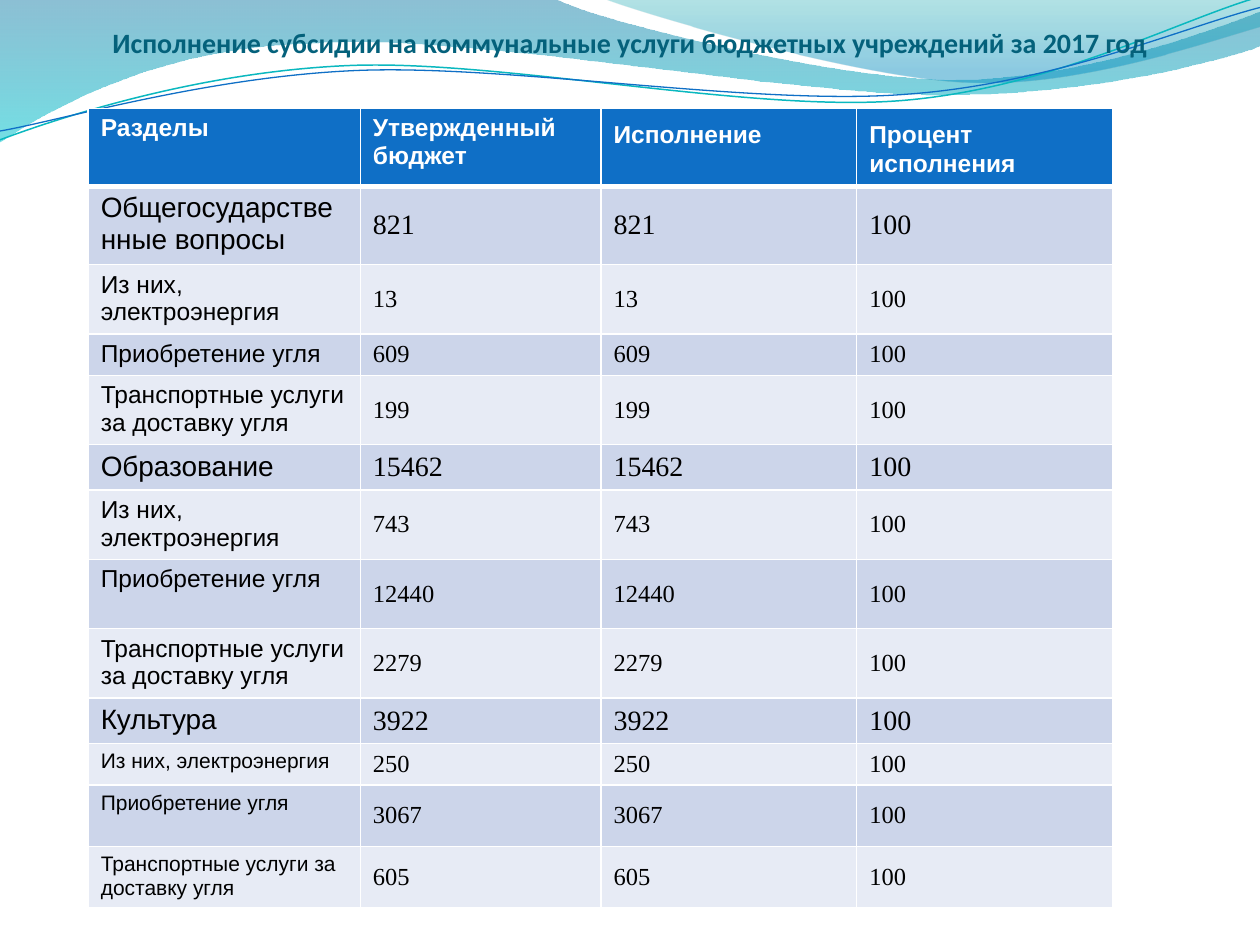
import math
from dataclasses import dataclass
from typing import Any, NamedTuple

from lxml import etree
from pptx import Presentation, util as u
from pptx.dml.color import RGBColor
from pptx.enum import text
from pptx.oxml import ns


@dataclass(frozen=True)
class Theme:
    """Colours, fonts and type sizes of the slide."""
    white: str = "FFFFFF"
    black: str = "000000"
    title: str = "04617B"
    header: str = "0F6FC6"
    bands: tuple = ("CCD5EA", "E7EBF5")
    wave_blue: str = "0074A1"
    wave_cyan: str = "00C6CF"
    crest_teal: str = "00A1A9"
    crest_blue: str = "008BBF"
    line_teal: str = "0AB8BF"
    title_font: str = "Calibri"
    label_font: str = "Arial"
    value_font: str = "Times New Roman"
    section_size: float = 16
    body_size: float = 14
    small_size: float = 12
    gap_size: float = 18


class Stop(NamedTuple):
    """One gradient stop with opacity in percent."""
    position: float
    color: str
    opacity: int


class Wave(NamedTuple):
    """An outline of straight (one point) and Bézier (three point) segments."""
    start: tuple
    segments: tuple
    stops: tuple = ()
    line: str = ""
    width: float = 0
    rotation: float = 0
    center: tuple = (0, 0)


class Row(NamedTuple):
    """One budget line of the table."""
    label: str
    amount: str
    height: float
    label_size: float
    value_size: float


THEME = Theme()
TITLE = "Исполнение субсидии на коммунальные услуги бюджетных учреждений за 2017 год"
POWER, COAL, DELIVERY = "Из них, электроэнергия", "Приобретение угля", "Транспортные услуги за доставку угля"
SECTION = (THEME.section_size, THEME.section_size)
BODY = (THEME.body_size, THEME.body_size)
SMALL = (THEME.small_size, THEME.body_size)
TABLE_BOX = (0.7, 0.86, 8.13, 6.5)
COLUMNS = (2.16, 1.91, 2.03, 2.03)
HEADER_HEIGHT = 0.62
HEADERS = (("Разделы",), ("Утвержденный бюджет",), ("Исполнение", " "), ("Процент", " ", "исполнения"))
ROWS = (
    Row("Общегосударственные вопросы", "821", 0.62, *SECTION),
    Row(POWER, "13", 0.55, *BODY),
    Row(COAL, "609", 0.33, *BODY),
    Row(DELIVERY, "199", 0.55, *BODY),
    Row("Образование", "15462", 0.36, *SECTION),
    Row(POWER, "743", 0.55, *BODY),
    Row(COAL, "12440", 0.55, *BODY),
    Row(DELIVERY, "2279", 0.55, *BODY),
    Row("Культура", "3922", 0.36, *SECTION),
    Row(POWER, "250", 0.33, *SMALL),
    Row(COAL, "3067", 0.49, *SMALL),
    Row(DELIVERY, "605", 0.49, *SMALL),
)
WAVES = (
    Wave((0, 0), (
        ((4.4, -0.01),),
        ((4.76, 0.17), (6.64, 0.63), (7.58, 0.63)),
        ((8.53, 0.63), (9.58, 0.26), (10, 0.09)),
        ((10.01, 0.36),),
        ((9.83, 0.44), (8.7, 0.76), (7.46, 0.75)),
        ((6.22, 0.75), (3.82, 0.28), (2.57, 0.34)),
        ((1.29, 0.36), (0.46, 0.83), (-0.01, 1.13)),
        ((0, 0),),
    ), stops=(Stop(0, THEME.wave_blue, 45), Stop(1, THEME.wave_cyan, 55))),
    Wave((4.79, -0.01), (
        ((5.09, 0.11), (6.82, 0.62), (7.69, 0.65)),
        ((8.56, 0.69), (9.61, 0.32), (10, 0.21)),
        ((10, 0),),
        ((4.79, -0.01),),
    ), stops=(Stop(0, THEME.crest_teal, 30), Stop(0.8, THEME.crest_blue, 45))),
    Wave((0, 1.11), (
        ((0.48, 0.93), (1.58, 0.57), (2.77, 0.52)),
        ((3.95, 0.47), (5.93, 0.89), (7.13, 0.8)),
        ((8.33, 0.71), (9.38, 0.15), (9.98, -0.02)),
    ), line=THEME.line_teal, width=0.85, rotation=357.3, center=(4.99, 0.57)),
    Wave((0, 1.04), (
        ((0.47, 0.96), (1.64, 0.61), (2.83, 0.56)),
        ((4.03, 0.51), (5.97, 0.84), (7.17, 0.75)),
        ((8.36, 0.67), (9.41, 0.21), (10, 0.06)),
    ), line=THEME.header, width=0.75, rotation=357.3, center=(5, 0.59)),
)


def level_point(point: tuple, wave: Wave) -> tuple:
    """Return a point with the rotation of its wave taken out."""
    angle = math.radians(-wave.rotation)
    dx, dy = point[0] - wave.center[0], point[1] - wave.center[1]
    return (u.Inches(wave.center[0] + dx * math.cos(angle) - dy * math.sin(angle)),
            u.Inches(wave.center[1] + dx * math.sin(angle) + dy * math.cos(angle)))


def bend_segments(shape: Any, wave: Wave) -> None:
    """Join the three steps of every Bézier segment into one curve."""
    steps = iter(list(shape.element.iter(ns.qn("a:lnTo"))))
    for segment in wave.segments:
        parts = [next(steps) for _ in segment]
        if len(parts) == 3:
            curve = etree.Element(ns.qn("a:cubicBezTo"))
            parts[0].addprevious(curve)
            for part in parts:
                curve.append(part[0])
                part.getparent().remove(part)


def draw_wave(slide: Any, wave: Wave) -> None:
    """Draw one wave behind the title."""
    builder = slide.shapes.build_freeform(*level_point(wave.start, wave))
    points = [level_point(point, wave) for segment in wave.segments for point in segment]
    builder.add_line_segments(points, close=bool(wave.stops))
    shape = builder.convert_to_shape()
    bend_segments(shape, wave)
    shape.rotation = wave.rotation
    shape.shadow.inherit = False
    if wave.stops:
        shape.line.fill.background()
        shape.fill.gradient()
        shape.fill.gradient_angle = 270
        for gradient_stop, stop in zip(shape.fill.gradient_stops, wave.stops):
            gradient_stop.position = stop.position
            gradient_stop.color.rgb = RGBColor.from_string(stop.color)
        for color, stop in zip(shape.element.spPr.iter(ns.qn("a:srgbClr")), wave.stops):
            etree.SubElement(color, ns.qn("a:alpha"), val=str(stop.opacity * 1000))
    else:
        shape.fill.background()
        shape.line.color.rgb = RGBColor.from_string(wave.line)
        shape.line.width = u.Pt(wave.width)
    slide.shapes.title.element.addprevious(shape.element)


def add_text(paragraph: Any, words: str, size: float, name: str, color: str, bold: bool = False) -> None:
    """Add one formatted run."""
    run = paragraph.add_run()
    run.text = words
    for attribute, value in {"size": u.Pt(size), "name": name, "bold": bold}.items():
        setattr(run.font, attribute, value)
    run.font.color.rgb = RGBColor.from_string(color)


def draw_title(slide: Any) -> None:
    """Place and fill the title."""
    title = slide.shapes.title
    for attribute, value in {"left": 0.5, "top": 0, "width": 9, "height": 0.47}.items():
        setattr(title, attribute, u.Inches(value))
    frame_format = {"margin_left": 0, "margin_right": 0, "margin_top": u.Inches(0.05), "margin_bottom": 0,
                    "word_wrap": True, "auto_size": text.MSO_AUTO_SIZE.NONE,
                    "vertical_anchor": text.MSO_ANCHOR.BOTTOM}
    for attribute, value in frame_format.items():
        setattr(title.text_frame, attribute, value)
    paragraph = title.text_frame.paragraphs[0]
    paragraph.alignment = text.PP_ALIGN.CENTER
    add_text(paragraph, TITLE, THEME.section_size, THEME.title_font, THEME.title, True)


def style_cell(cell: Any, fill: str, bottom: float = 1) -> None:
    """Give a cell white borders and a plain fill."""
    properties = cell._tc.get_or_add_tcPr()
    for side, width in {"L": 1, "R": 1, "T": 1, "B": bottom}.items():
        border = etree.SubElement(properties, ns.qn(f"a:ln{side}"), w=str(u.Pt(width)))
        solid = etree.SubElement(border, ns.qn("a:solidFill"))
        etree.SubElement(solid, ns.qn("a:srgbClr"), val=THEME.white)
    cell.fill.solid()
    cell.fill.fore_color.rgb = RGBColor.from_string(fill)


def draw_table(slide: Any) -> None:
    """Draw the budget table."""
    heights = (HEADER_HEIGHT, *(row.height for row in ROWS))
    frame = slide.shapes.add_table(len(heights), len(COLUMNS), *map(u.Inches, TABLE_BOX))
    table = frame.table
    for column, width in zip(table.columns, COLUMNS):
        column.width = u.Inches(width)
    for table_row, height in zip(table.rows, heights):
        table_row.height = u.Inches(height)
    frame.height = u.Inches(TABLE_BOX[3])
    for cell, pieces in zip(table.rows[0].cells, HEADERS):
        style_cell(cell, THEME.header, bottom=3)
        for piece in pieces:
            size = THEME.body_size if piece.strip() else THEME.gap_size
            add_text(cell.text_frame.paragraphs[0], piece, size, THEME.label_font, THEME.white, True)
    for index, row in enumerate(ROWS):
        for column, words in enumerate((row.label, row.amount, row.amount, "100")):
            cell = table.cell(index + 1, column)
            style_cell(cell, THEME.bands[index % 2])
            size, font = (row.value_size, THEME.value_font) if column else (row.label_size, THEME.label_font)
            if column:
                cell.vertical_anchor = text.MSO_ANCHOR.MIDDLE
            add_text(cell.text_frame.paragraphs[0], words, size, font, THEME.black)


def main() -> None:
    """Build and save the slide."""
    presentation = Presentation()
    presentation.slide_width, presentation.slide_height = u.Inches(10), u.Inches(7.5)
    slide = presentation.slides.add_slide(presentation.slide_layouts[5])
    draw_title(slide)
    for wave in WAVES:
        draw_wave(slide, wave)
    draw_table(slide)
    presentation.save("out.pptx")


if __name__ == "__main__":
    main()
